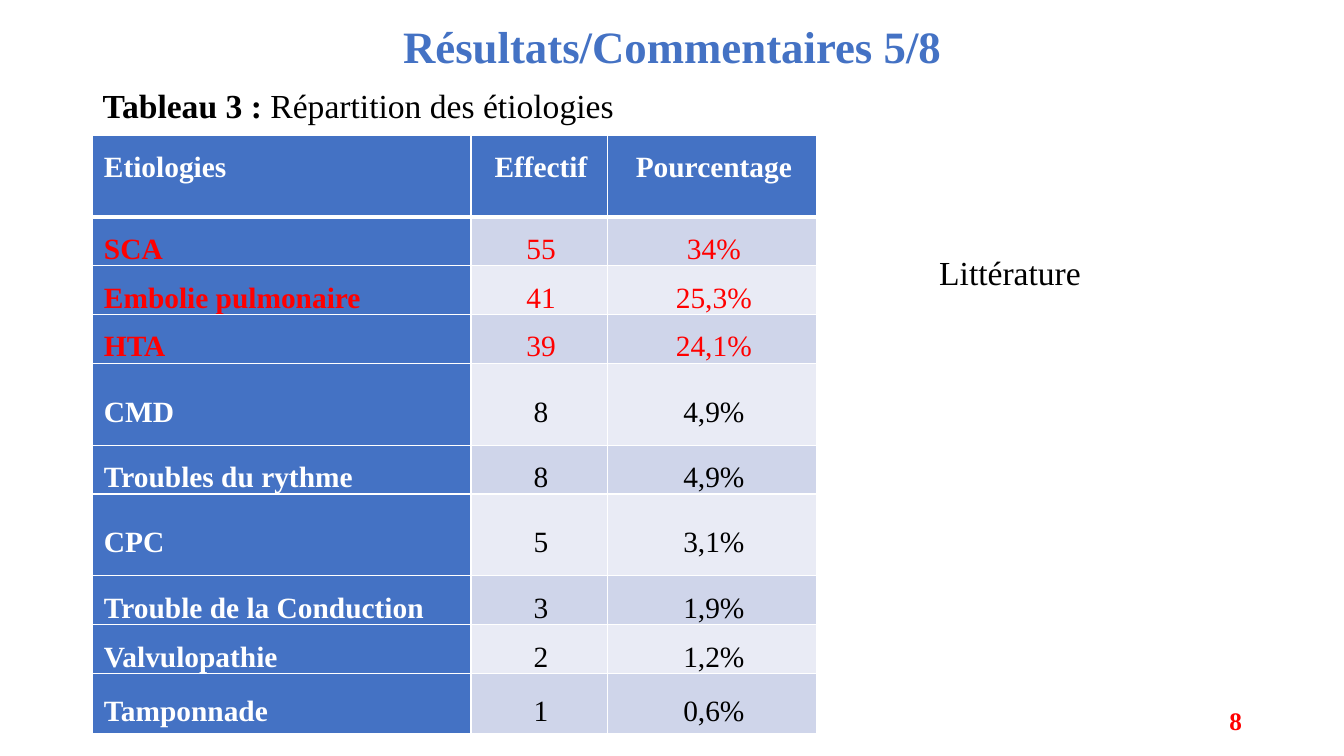
from dataclasses import dataclass
from typing import Optional

from lxml import etree
from pptx import Presentation
from pptx import util as u
from pptx.dml.color import RGBColor
from pptx.enum import text
from pptx.oxml import ns


@dataclass(frozen=True)
class Theme:
    font: str = "Times New Roman"
    blue: str = "4472C4"
    red: str = "FF0000"
    black: str = "000000"
    white: str = "FFFFFF"
    bands: tuple[str, str] = ("CFD5EA", "E9EBF5")
    title_size: int = 32
    body_size: int = 24
    table_size: int = 21
    number_size: int = 18


@dataclass(frozen=True)
class Etiology:
    name: str
    count: str
    share: str
    height: float = 1.12
    frequent: bool = False


@dataclass(frozen=True)
class Label:
    spans: tuple[tuple[str, bool], ...]  # wording and whether it is bold
    box: tuple[float, float, float, float]
    size: int
    color: str
    align: text.PP_ALIGN = text.PP_ALIGN.LEFT
    anchor: text.MSO_ANCHOR = text.MSO_ANCHOR.TOP
    spacing: Optional[float] = None
    after: int = 0


THEME = Theme()
COLUMN_WIDTHS = (9.53, 3.43, 5.28)
HEADINGS = ("Etiologies", "Effectif", "Pourcentage")
TALL_ROW = 2.06
ETIOLOGIES = (
    Etiology("SCA", "55", "34%", frequent=True),
    Etiology("Embolie pulmonaire", "41", "25,3%", frequent=True),
    Etiology("HTA", "39", "24,1%", frequent=True),
    Etiology("CMD", "8", "4,9%", TALL_ROW),
    Etiology("Troubles du rythme", "8", "4,9%"),
    Etiology("CPC", "5", "3,1%", TALL_ROW),
    Etiology("Trouble de la Conduction", "3", "1,9%"),
    Etiology("Valvulopathie", "2", "1,2%"),
    Etiology("Tamponnade", "1", "0,6%", 1.52),
)
LABELS = (
    Label((("Résultats/Commentaires 5/8", True),), (2.34, 0.28, 29.21, 1.9),
          THEME.title_size, THEME.blue, text.PP_ALIGN.CENTER,
          text.MSO_ANCHOR.MIDDLE, 0.9),
    Label((("Tableau 3 : ", True), ("Répartition des étiologies", False)),
          (2.34, 1.5, 16.94, 1.63), THEME.body_size, THEME.black,
          spacing=1.5, after=10),
    Label((("Littérature", False),), (23.42, 6.22, 6.68, 1.27),
          THEME.body_size, THEME.black),
    Label((("8", True),), (30.1, 17.65, 1.45, 1.02), THEME.number_size,
          THEME.red, text.PP_ALIGN.RIGHT, text.MSO_ANCHOR.MIDDLE),
)


def style_font(font, size: int, color: str) -> None:
    font.name = THEME.font
    font.size = u.Pt(size)
    font.color.rgb = RGBColor.from_string(color)


def add_label(page, label: Label) -> None:
    frame = page.shapes.add_textbox(*map(u.Cm, label.box)).text_frame
    frame.word_wrap = True
    frame.vertical_anchor = label.anchor
    para = frame.paragraphs[0]
    para.alignment = label.align
    para.line_spacing = label.spacing
    para.space_after = u.Pt(label.after)
    style_font(para.font, label.size, label.color)
    for wording, bold in label.spans:
        span = para.add_run()
        span.text = wording
        span.font.bold = bold


def add_borders(cell, top: int, bottom: int) -> None:
    """Draw white cell edges; top and bottom widths are in points."""
    properties = cell._tc.get_or_add_tcPr()
    widths = {"lnL": 1, "lnR": 1, "lnT": top, "lnB": bottom}
    for position, (edge, width) in enumerate(widths.items()):
        line = etree.Element(ns.qn(f"a:{edge}"), w=str(u.Pt(width)))
        fill = etree.SubElement(line, ns.qn("a:solidFill"))
        etree.SubElement(fill, ns.qn("a:srgbClr"), val=THEME.white)
        properties.insert(position, line)


def fill_cell(cell, wording: str, color: str, fill: str,
              is_heading: bool, is_name: bool) -> None:
    cell.fill.solid()
    cell.fill.fore_color.rgb = RGBColor.from_string(fill)
    cell.margin_left = cell.margin_right = u.Cm(0.18)
    cell.margin_top = cell.margin_bottom = 0
    cell.vertical_anchor = (
        text.MSO_ANCHOR.TOP if is_heading else text.MSO_ANCHOR.MIDDLE)
    para = cell.text_frame.paragraphs[0]
    para.text = wording
    para.alignment = text.PP_ALIGN.LEFT if is_name else text.PP_ALIGN.CENTER
    para.line_spacing = 1.5
    para._p.get_or_add_pPr().set("marL", str(u.Cm(0.1)))
    style_font(para.font, THEME.table_size, color)
    para.font.bold = is_heading or is_name


def add_etiology_table(page) -> None:
    rows = [HEADINGS] + [(e.name, e.count, e.share) for e in ETIOLOGIES]
    heights = [TALL_ROW] + [e.height for e in ETIOLOGIES]
    table = page.shapes.add_table(
        len(rows), len(HEADINGS), u.Cm(2.34), u.Cm(3.4),
        u.Cm(sum(COLUMN_WIDTHS)), u.Cm(sum(heights))).table
    for column, width in zip(table.columns, COLUMN_WIDTHS):
        column.width = u.Cm(width)
    for r, (wordings, height) in enumerate(zip(rows, heights)):
        table.rows[r].height = u.Cm(height)
        for c, wording in enumerate(wordings):
            is_heading, is_name = r == 0, c == 0
            on_blue = is_heading or is_name
            color = THEME.white if on_blue else THEME.black
            if not is_heading and ETIOLOGIES[r - 1].frequent:
                color = THEME.red
            fill = THEME.blue if on_blue else THEME.bands[(r - 1) % 2]
            cell = table.cell(r, c)
            fill_cell(cell, wording, color, fill, is_heading, is_name)
            add_borders(cell, top=3 if r == 1 else 1,
                        bottom=3 if is_heading else 1)


def main() -> None:
    deck = Presentation()
    deck.slide_width, deck.slide_height = u.Cm(33.87), u.Cm(19.05)
    page = deck.slides.add_slide(deck.slide_layouts[6])
    add_etiology_table(page)
    for label in LABELS:
        add_label(page, label)
    deck.save("out.pptx")


if __name__ == "__main__":
    main()
